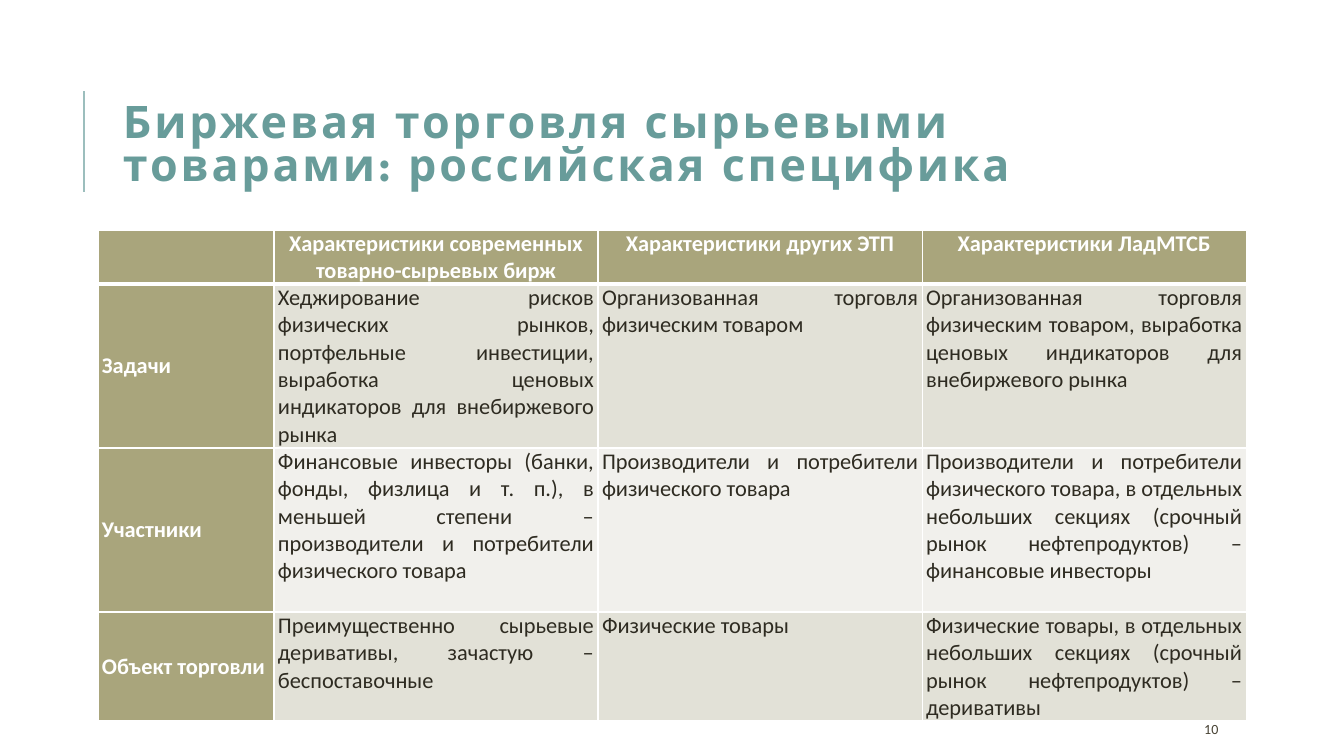
from itertools import accumulate
from lxml.etree import SubElement
from pptx import Presentation
from pptx.dml.color import RGBColor
from pptx.enum.shapes import MSO_CONNECTOR as Connector
from pptx.enum.text import MSO_ANCHOR as Anchor, PP_ALIGN as Align
from pptx.oxml.ns import qn
from pptx.util import Emu, Inches, Pt

# Content
TITLE = "Биржевая торговля сырьевыми товарами: российская специфика"
PAGE_NUMBER = "10"
ROWS = [
    ["", "Характеристики современных товарно-сырьевых бирж",
     "Характеристики других ЭТП", "Характеристики ЛадМТСБ"],
    ["Задачи",
     "Хеджирование рисков физических рынков, портфельные инвестиции, "
     "выработка ценовых индикаторов для внебиржевого рынка",
     "Организованная торговля физическим товаром",
     "Организованная торговля физическим товаром, выработка ценовых "
     "индикаторов для внебиржевого рынка"],
    ["Участники",
     "Финансовые инвесторы (банки, фонды, физлица и т. п.), в меньшей "
     "степени – производители и потребители физического товара",
     "Производители и потребители физического товара",
     "Производители и потребители физического товара, в отдельных небольших "
     "секциях (срочный рынок нефтепродуктов) – финансовые инвесторы"],
    ["Объект торговли",
     "Преимущественно сырьевые деривативы, зачастую – беспоставочные",
     "Физические товары",
     "Физические товары, в отдельных небольших секциях (срочный рынок "
     "нефтепродуктов) – деривативы"],
]

# Format
COLORS = {
    "title": "689C9A", "rule": "9CBEBD", "page": "474233", "text": "2E2B21",
    "white": "FFFFFF", "head": "A9A57C", "odd": "E2E1D7", "even": "F1F0EC",
}
TITLE_FONT = {"name": "League Spartan", "size": Pt(32), "bold": True}
PAGE_FONT = {"name": "Calibri", "size": Pt(10)}
HEAD_FONT = {"name": "Calibri", "size": Pt(16), "bold": True}
BODY_FONT = HEAD_FONT | {"bold": False}
CELL_MARGINS = {"margin_left": 4, "margin_right": 4, "margin_top": 0, "margin_bottom": 0}

# Layout in px
TITLE_BOX = (113, 65, 1072, 165)
PAGE_BOX = (1194, 714, 107, 30)
RULE = (84, 192, 84, 91)
TABLE_LEFT, TABLE_TOP = 98, 230
COLUMN_WIDTHS = [176, 324, 324, 324]
ROW_HEIGHTS = [54, 164, 164, 109]


def px(value):
    return Emu(round(value * 914400 / 100.8))


def color(name):
    return RGBColor.from_string(COLORS[name])


def apply(target, values):
    for name, value in values.items():
        setattr(target, name, value)


def write(para, text, font, ink):
    span = para.add_run()
    span.text = text
    apply(span.font, font)
    span.font.color.rgb = color(ink)
    return span


def add_text(page, place, text, font, ink):
    box = page.shapes.add_textbox(*map(px, place))
    apply(box.text_frame, {"word_wrap": True, "vertical_anchor": Anchor.MIDDLE})
    para = box.text_frame.paragraphs[0]
    return para, write(para, text, font, ink)


def add_borders(cell, widths):
    properties = cell._tc.get_or_add_tcPr()
    for side, width in widths.items():
        line = SubElement(properties, qn(f"a:ln{side}"), w=str(Pt(width)))
        fill = SubElement(line, qn("a:solidFill"))
        SubElement(fill, qn("a:srgbClr"), val=COLORS["white"])


def fill_cell(cell, row, column, text):
    is_head = row == 0 or column == 0
    add_borders(cell, {"L": 1, "R": 1, "T": 3 if row == 1 else 1, "B": 3 if row == 0 else 1})
    cell.fill.solid()
    cell.fill.fore_color.rgb = color("head" if is_head else "odd" if row % 2 else "even")
    apply(cell, {name: px(value) for name, value in CELL_MARGINS.items()})
    cell.vertical_anchor = Anchor.MIDDLE if row and not column else Anchor.TOP
    para = cell.text_frame.paragraphs[0]
    para.alignment = Align.JUSTIFY if row else Align.CENTER
    if text:
        write(para, text, HEAD_FONT if is_head else BODY_FONT, "white" if is_head else "text")


def add_comparison(page):
    width, height = (list(accumulate(sizes))[-1] for sizes in (COLUMN_WIDTHS, ROW_HEIGHTS))
    place = map(px, (TABLE_LEFT, TABLE_TOP, width, height))
    table = page.shapes.add_table(len(ROWS), len(COLUMN_WIDTHS), *place).table
    for column, size in zip(table.columns, COLUMN_WIDTHS):
        column.width = px(size)
    for row, size in zip(table.rows, ROW_HEIGHTS):
        row.height = px(size)
    for row, texts in enumerate(ROWS):
        for column, text in enumerate(texts):
            fill_cell(table.cell(row, column), row, column, text)


def main():
    deck = Presentation()
    apply(deck, {"slide_width": Inches(13.33), "slide_height": Inches(7.5)})
    page = deck.slides.add_slide(deck.slide_layouts[6])

    # Rule beside the title
    rule = page.shapes.add_connector(Connector.STRAIGHT, *map(px, RULE))
    rule.line.color.rgb = color("rule")
    rule.line.width = Pt(1.5)
    SubElement(rule._element.spPr, qn("a:effectLst"))

    # Title and page number
    para, span = add_text(page, TITLE_BOX, TITLE, TITLE_FONT, "title")
    para.line_spacing = 0.8
    span.font._element.set("spc", "200")
    add_text(page, PAGE_BOX, PAGE_NUMBER, PAGE_FONT, "page")

    # Comparison table
    add_comparison(page)
    deck.save("out.pptx")


if __name__ == "__main__":
    main()
